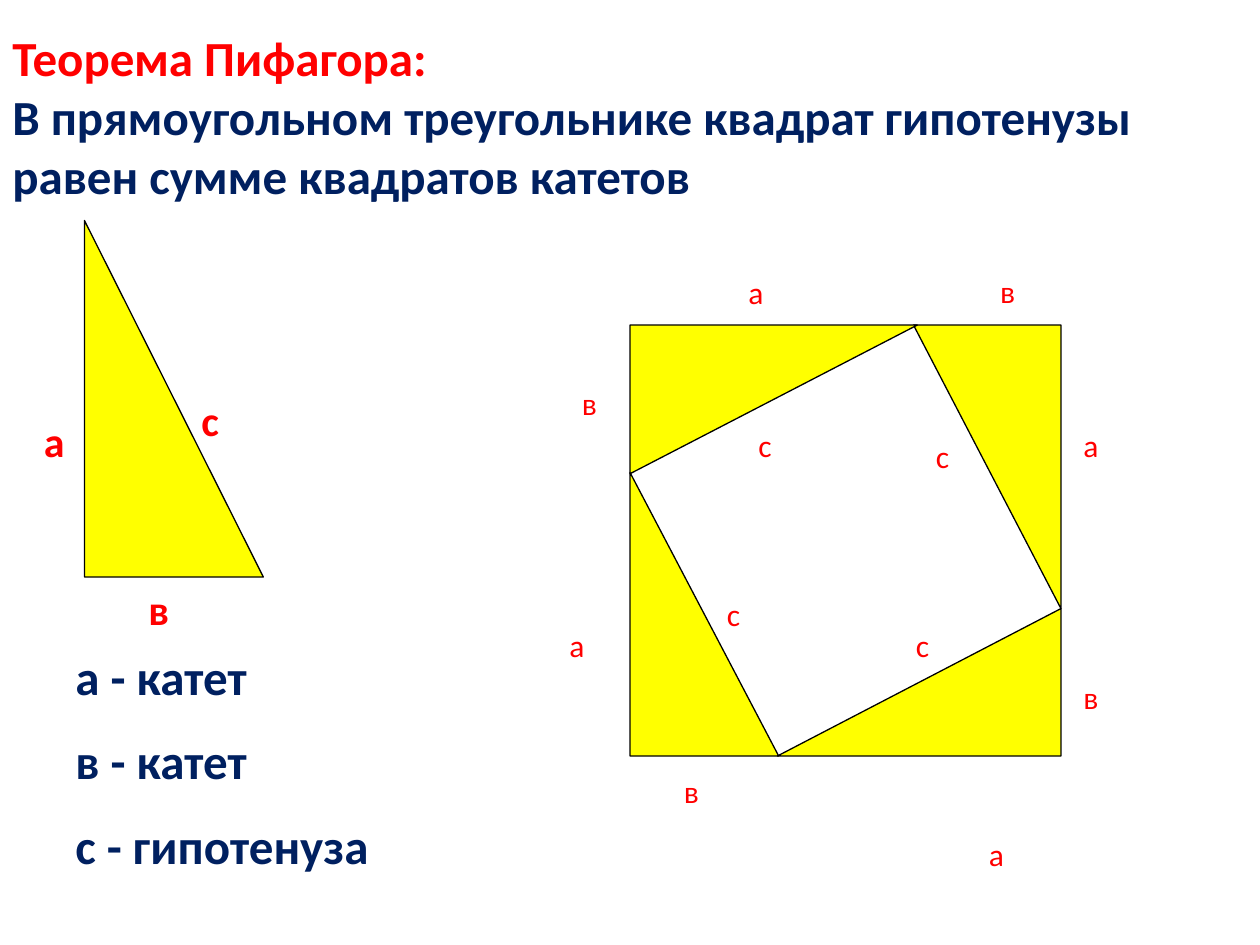
from pptx import Presentation
from pptx.dml.color import RGBColor
from pptx.enum.shapes import MSO_SHAPE
from pptx.enum.text import MSO_AUTO_SIZE
from pptx.util import Inches, Pt

RIGHT_TRIANGLE = MSO_SHAPE.RIGHT_TRIANGLE
FIT_SHAPE = MSO_AUTO_SIZE.SHAPE_TO_FIT_TEXT
COLORS = {"red": "FF0000", "navy": "002060", "yellow": "FFFF00", "black": "000000"}


def add_triangle(x, y, w, h, rotation=0):
    sp = s.shapes.add_shape(RIGHT_TRIANGLE, Inches(x), Inches(y), Inches(w), Inches(h))
    sp.rotation = rotation
    sp.shadow.inherit = False
    sp.fill.solid()
    sp.fill.fore_color.rgb = RGBColor.from_string(COLORS["yellow"])
    sp.line.color.rgb = RGBColor.from_string(COLORS["black"])
    sp.line.width = Pt(0.75)


def add_text(x, y, w, h, lines, size, bold=False, wrap=False):
    tf = s.shapes.add_textbox(Inches(x), Inches(y), Inches(w), Inches(h)).text_frame
    tf.word_wrap = wrap
    tf.auto_size = FIT_SHAPE
    for i, (text, color) in enumerate(lines):
        p = tf.add_paragraph() if i else tf.paragraphs[0]
        p.text = text
        p.font.name = "Calibri"
        p.font.size = Pt(size)
        p.font.bold = bold
        p.font.color.rgb = RGBColor.from_string(COLORS[color])


prs = Presentation()
prs.slide_width, prs.slide_height = Inches(10), Inches(7.5)
s = prs.slides.add_slide(prs.slide_layouts[6])

# Theorem
add_text(0, 0.17, 9.84, 1.51, [
    ("Теорема Пифагора:", "red"),
    ("В прямоугольном треугольнике квадрат гипотенузы", "navy"),
    ("равен сумме квадратов катетов", "navy"),
], 28, bold=True, wrap=True)

# Single triangle with its sides
add_triangle(0.67, 1.75, 1.42, 2.83)
for text, x, y, w in [("с", 1.5, 3.08, 0.34), ("а", 0.25, 3.25, 0.37), ("в", 1.08, 4.58, 0.37)]:
    add_text(x, y, w, 0.5, [(text, "red")], 24, bold=True)

# Legend
for i, (text, w) in enumerate([("а - катет", 1.58), ("в - катет", 1.58), ("с - гипотенуза", 2.55)]):
    add_text(0.5, 5.08 + 0.67 * i, w, 0.57, [(text, "navy")], 28, bold=True)

# Square made of four triangles
for x, y, w, h, rotation in [
    (5, 3.75, 1.18, 2.25, 0),
    (7.25, 2.58, 1.17, 2.25, 180),
    (6.71, 4.29, 1.17, 2.25, 270),
    (5.55, 2.03, 1.18, 2.28, 90),
]:
    add_triangle(x, y, w, h, rotation)

# Side labels of the square
label_widths = {"а": 0.32, "в": 0.34, "с": 0.31}
label_places = {
    "с": [(5.92, 3.33), (5.67, 4.67), (7.33, 3.42), (7.17, 4.92)],
    "в": [(5.33, 6.08), (8.5, 5.33), (4.52, 3), (7.84, 2.11)],
    "а": [(8.5, 3.33), (7.75, 6.58), (4.42, 4.92), (5.84, 2.12)],
}
for text, places in label_places.items():
    for x, y in places:
        add_text(x, y, label_widths[text], 0.4, [(text, "red")], 18)

prs.save("out.pptx")
